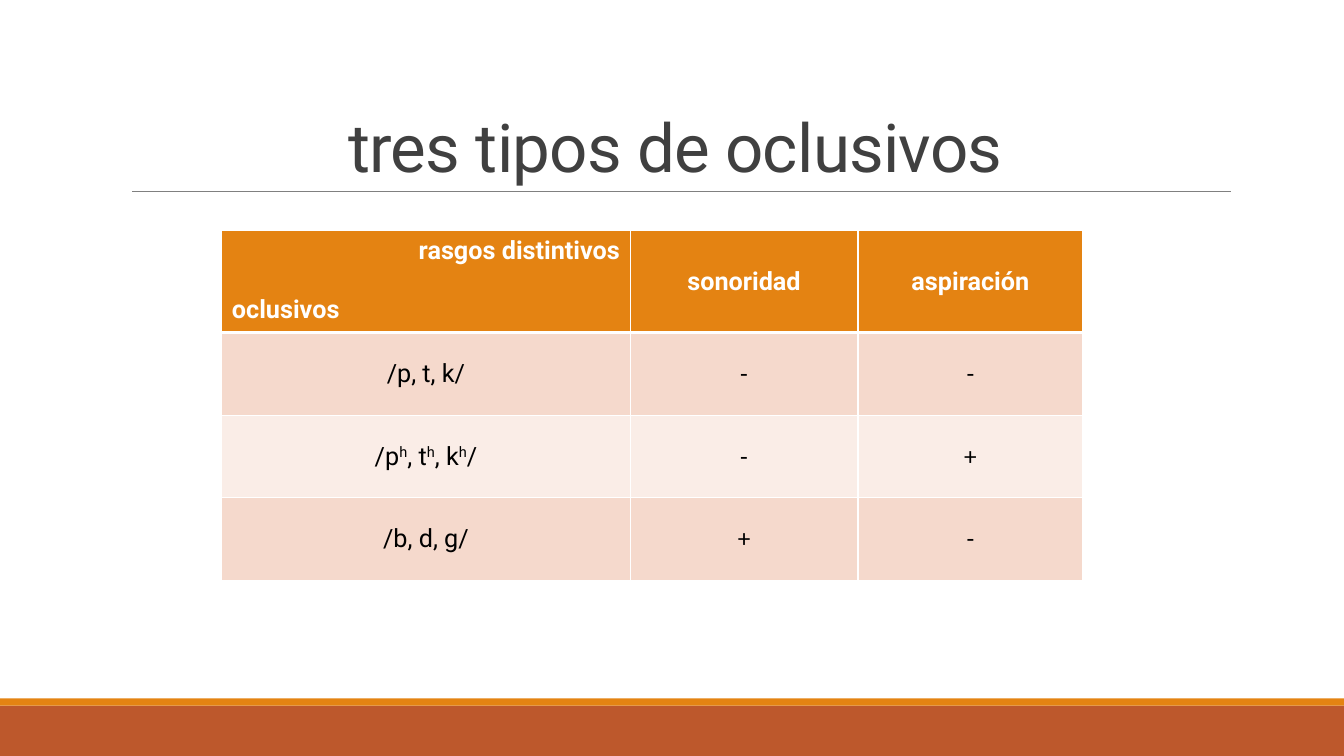
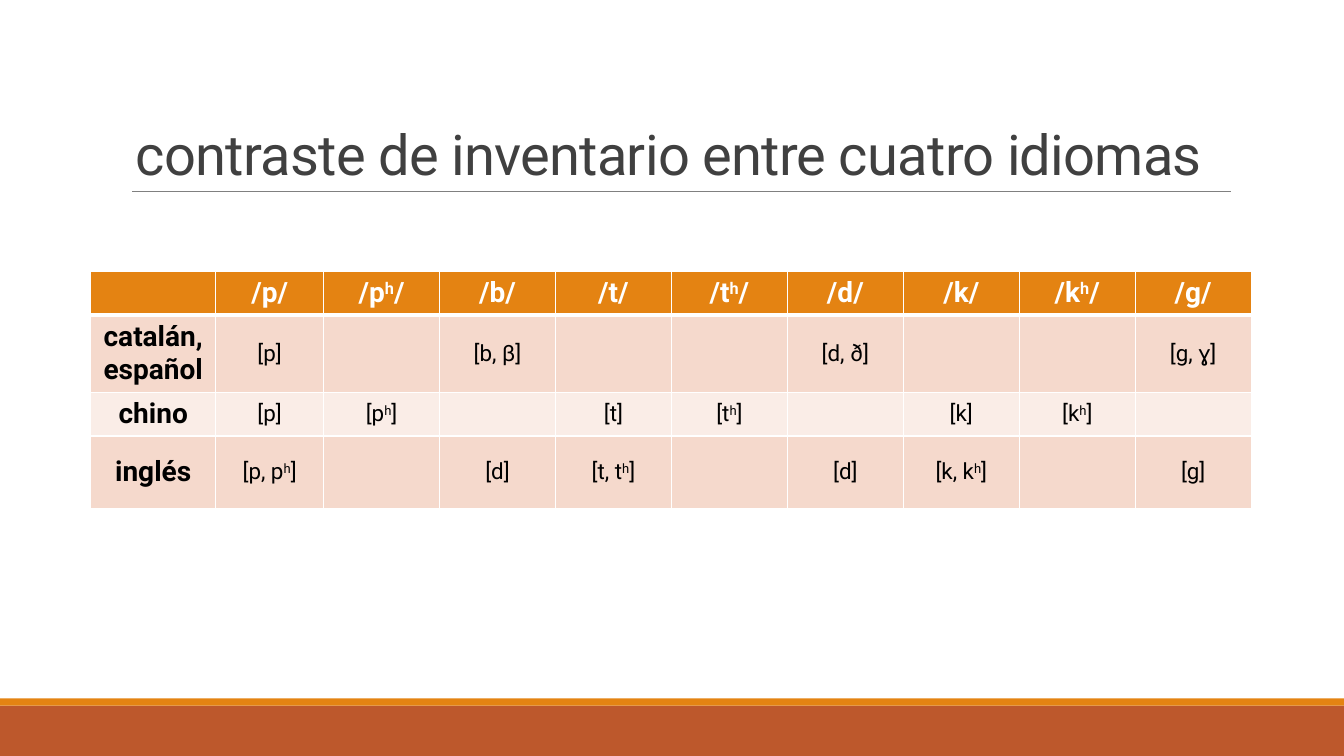
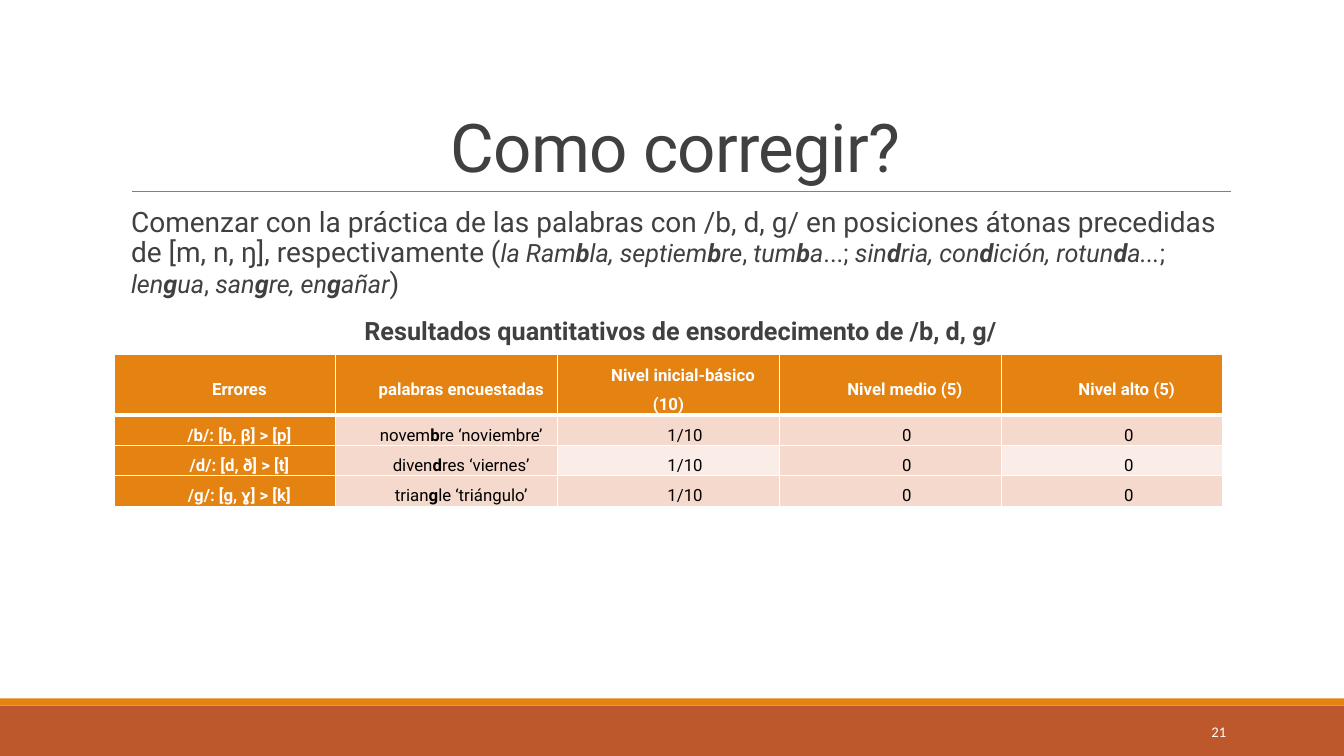
from dataclasses import dataclass

from lxml.etree import SubElement
from pptx import Presentation
from pptx.dml.color import RGBColor
from pptx.enum.shapes import MSO_CONNECTOR, MSO_SHAPE
from pptx.enum.text import MSO_ANCHOR, PP_ALIGN
from pptx.oxml.ns import qn
from pptx.util import Inches, Pt


@dataclass(frozen=True)
class Theme:
    font: str = "Roboto"
    plain_font: str = "Calibri"
    white: str = "FFFFFF"
    black: str = "000000"
    text: str = "404040"
    rule: str = "808080"
    orange: str = "E48312"
    rust: str = "BD582C"
    band_dark: str = "F5D9CC"
    band_light: str = "FAEDE7"
    title: float = 48
    title_small: float = 40
    large: float = 20
    body: float = 18
    cell: float = 16
    small: float = 12
    number: float = 10.5


@dataclass(frozen=True)
class Look:
    size: float
    color: str
    bold: bool = False
    fill: str = ""
    font: str = "Roboto"


T = Theme()
WIDTH, HEIGHT = 13.33, 7.5


def rgb(value):
    return RGBColor.from_string(value)


# Text: *bold*, _italic_, ^superscript^, ~small~ are toggles
def write(p, text, look, small=None):
    p.clear()
    on = dict.fromkeys("*_^~", False)
    piece = ""
    for ch in text + "\0":
        if ch not in on and ch != "\0":
            piece += ch
            continue
        if piece:
            r = p.add_run()
            r.text = piece
            f = r.font
            f.name = look.font
            f.size = Pt(small if on["~"] else look.size)
            f.bold = look.bold or on["*"]
            f.italic = on["_"]
            f.color.rgb = rgb(look.color)
            if on["^"]:
                r._r.get_or_add_rPr().set("baseline", "30000")
            piece = ""
        if ch in on:
            on[ch] = not on[ch]


def indent(p, left=0, first=0):
    pPr = p._p.get_or_add_pPr()
    pPr.set("marL", str(Inches(left)))
    pPr.set("indent", str(Inches(first)))


def add_text(s, left, top, width, height, anchor=MSO_ANCHOR.TOP):
    box = s.shapes.add_textbox(Inches(left), Inches(top), Inches(width), Inches(height))
    tf = box.text_frame
    tf.word_wrap = True
    tf.vertical_anchor = anchor
    return tf


# Parts every slide shares: bottom bands, rule and title
def add_frame(s, title, size=T.title):
    for top, height, color in ((7, 0.5, T.rust), (6.93, 0.07, T.orange)):
        band = s.shapes.add_shape(MSO_SHAPE.RECTANGLE, 0, Inches(top),
                                  Inches(WIDTH), Inches(height))
        band.shadow.inherit = False
        band.fill.solid()
        band.fill.fore_color.rgb = rgb(color)
        band.line.fill.background()

    rule = s.shapes.add_connector(MSO_CONNECTOR.STRAIGHT, Inches(1.31), Inches(1.9),
                                  Inches(12.21), Inches(1.9))
    rule.line.color.rgb = rgb(T.rule)
    rule.line.width = Pt(0.5)
    SubElement(rule._element.spPr, qn("a:effectLst"))

    p = add_text(s, 1.2, 0.31, 11, 1.59, MSO_ANCHOR.BOTTOM).paragraphs[0]
    write(p, title, Look(size, T.text))
    p.alignment = PP_ALIGN.CENTER
    p.line_spacing = 0.85
    for r in p.runs:
        r._r.get_or_add_rPr().set("spc", "-50")


# Tables
def add_borders(cell, row):
    widths = {"lnL": 1, "lnR": 1, "lnT": 3 if row == 1 else 1, "lnB": 3 if row == 0 else 1}
    tcPr = cell._tc.get_or_add_tcPr()
    for side, width in widths.items():
        ln = SubElement(tcPr, qn(f"a:{side}"), w=str(Pt(width)))
        fill = SubElement(ln, qn("a:solidFill"))
        SubElement(fill, qn("a:srgbClr"), val=T.white)


def add_grid(s, left, top, cols, heights, rows, look_at):
    frame = s.shapes.add_table(len(heights), len(cols), Inches(left), Inches(top),
                               Inches(sum(cols)), Inches(sum(heights)))
    table = frame.table
    table.first_row = table.horz_banding = False
    for column, width in zip(table.columns, cols):
        column.width = Inches(width)
    for row, height in zip(table.rows, heights):
        row.height = Inches(height)
    for i, values in enumerate(rows):
        for j, value in enumerate(values):
            cell, look = table.cell(i, j), look_at(i, j)
            add_borders(cell, i)
            cell.fill.solid()
            cell.fill.fore_color.rgb = rgb(look.fill)
            cell.vertical_anchor = MSO_ANCHOR.MIDDLE
            if not value:
                continue
            cell.text_frame.text = value
            for p in cell.text_frame.paragraphs:
                write(p, p.text, look)
                p.alignment = PP_ALIGN.CENTER
    return table


def band_fill(row):
    return T.band_dark if row % 2 else T.band_light


# Slide: three types of stops
def add_types_slide(s):
    add_frame(s, "tres tipos de oclusivos")

    def look_at(i, j):
        if i == 0:
            return Look(T.body, T.white, True, T.orange)
        return Look(T.body, T.black, False, band_fill(i), T.plain_font if j else T.font)

    rows = [
        ("rasgos distintivos\noclusivos", "sonoridad", "aspiración"),
        ("/p, t, k/", "-", "-"),
        ("/p^h^, t^h^, k^h^/", "-", "+"),
        ("/b, d, g/", "+", "-"),
    ]
    table = add_grid(s, 2.2, 2.29, (4.05, 2.26, 2.23), (1.01, 0.82, 0.82, 0.82),
                     rows, look_at)
    corner = table.cell(0, 0)
    corner.vertical_anchor = MSO_ANCHOR.TOP
    features, stops = corner.text_frame.paragraphs
    features.alignment = PP_ALIGN.RIGHT
    stops.alignment = PP_ALIGN.LEFT
    stops.space_before = Pt(21)


# Slide: inventories of the languages
def add_inventory_slide(s):
    add_frame(s, "contraste de inventario entre cuatro idiomas ", T.title_small)

    def look_at(i, j):
        if i == 0:
            return Look(T.large, T.white, True, T.orange)
        return Look(T.cell if j else T.large, T.black, j == 0, band_fill(i))

    rows = [
        ("", "/p/", "/p^h^/", "/b/", "/t/", "/t^h^/", "/d/", "/k/", "/k^h^/", "/g/"),
        ("catalán,\nespañol", "[p]", "", "[b, β]", "", "", "[d, ð]", "", "", "[g, ɣ]"),
        ("chino", "[p]", "[p^h^]", "", "[t]", "[t^h^]", "", "[k]", "[k^h^]", ""),
        ("inglés", "[p, p^h^]", "", "[d]", "[t, t^h^]", "", "[d]", "[k, k^h^]", "", "[g]"),
    ]
    add_grid(s, 0.9, 2.69, (1.24, 1.07) + (1.15,) * 8, (0.41, 0.74, 0.42, 0.72),
             rows, look_at)


# Slide: how to correct, with results
def add_practice(s):
    tf = add_text(s, 1.2, 2.02, 11, 4.4)
    tf.margin_left = tf.margin_right = 0
    practice, caption = tf.paragraphs[0], tf.add_paragraph()
    write(practice,
          "Comenzar con la práctica de las palabras con /b, d, g/ en posiciones átonas "
          "precedidas de [m, n, ŋ], respectivamente~ ~(~_la Ram*b*la, septiem*b*re_, "
          "_tum*b*a_...; _sin*d*ria, con*d*ición, rotun*d*a..._; _len*g*ua_, "
          "_san*g*re, en*g*añar_~)", Look(T.large, T.text), T.body)
    write(caption, "Resultados quantitativos de ensordecimento de /b, d, g/",
          Look(T.body, T.text, True))
    caption.alignment = PP_ALIGN.CENTER
    for p in (practice, caption):
        indent(p, left=0.1)
        p.line_spacing = 0.9
        p.space_before, p.space_after = Pt(12), Pt(2)


def add_results(s):
    def look_at(i, j):
        if i == 0 or j == 0:
            return Look(T.small, T.white, True, T.orange)
        light = i == 2 and j in (2, 4)
        return Look(T.small, T.black, False, T.band_light if light else T.band_dark)

    rows = [
        ("Errores", "palabras encuestadas", "Nivel inicial-básico (10)",
         "Nivel medio (5)", "Nivel alto (5)"),
        ("/b/: [b, β] > [p]", "novem*b*re ‘noviembre’", "1/10", "0", "0"),
        ("/d/: [d, ð] > [t]", "diven*d*res ‘viernes’", "1/10", "0", "0"),
        ("/g/: [g, ɣ] > [k]", "trian*g*le ‘triángulo’", "1/10", "0", "0"),
    ]
    table = add_grid(s, 1.13, 3.52, (2.2,) * 5, (0.58, 0.29, 0.29, 0.29), rows, look_at)
    for i in range(len(rows)):
        for j in range(len(rows[0])):
            cell = table.cell(i, j)
            cell.margin_left = cell.margin_right = Inches(0.07)
            cell.margin_top = cell.margin_bottom = 0
            p = cell.text_frame.paragraphs[0]
            p.line_spacing = 1.5
            indent(p, first=0.33 if i and j > 1 else 0.29)


def add_correction_slide(s):
    add_frame(s, "Como corregir?")
    add_practice(s)
    p = add_text(s, 10.83, 7.06, 1.43, 0.4, MSO_ANCHOR.MIDDLE).paragraphs[0]
    write(p, "21", Look(T.number, T.white, font=T.plain_font))
    p.alignment = PP_ALIGN.RIGHT
    add_results(s)


def main():
    prs = Presentation()
    prs.slide_width, prs.slide_height = Inches(WIDTH), Inches(HEIGHT)
    for build in (add_types_slide, add_inventory_slide, add_correction_slide):
        build(prs.slides.add_slide(prs.slide_layouts[6]))
    prs.save("out.pptx")


if __name__ == "__main__":
    main()
